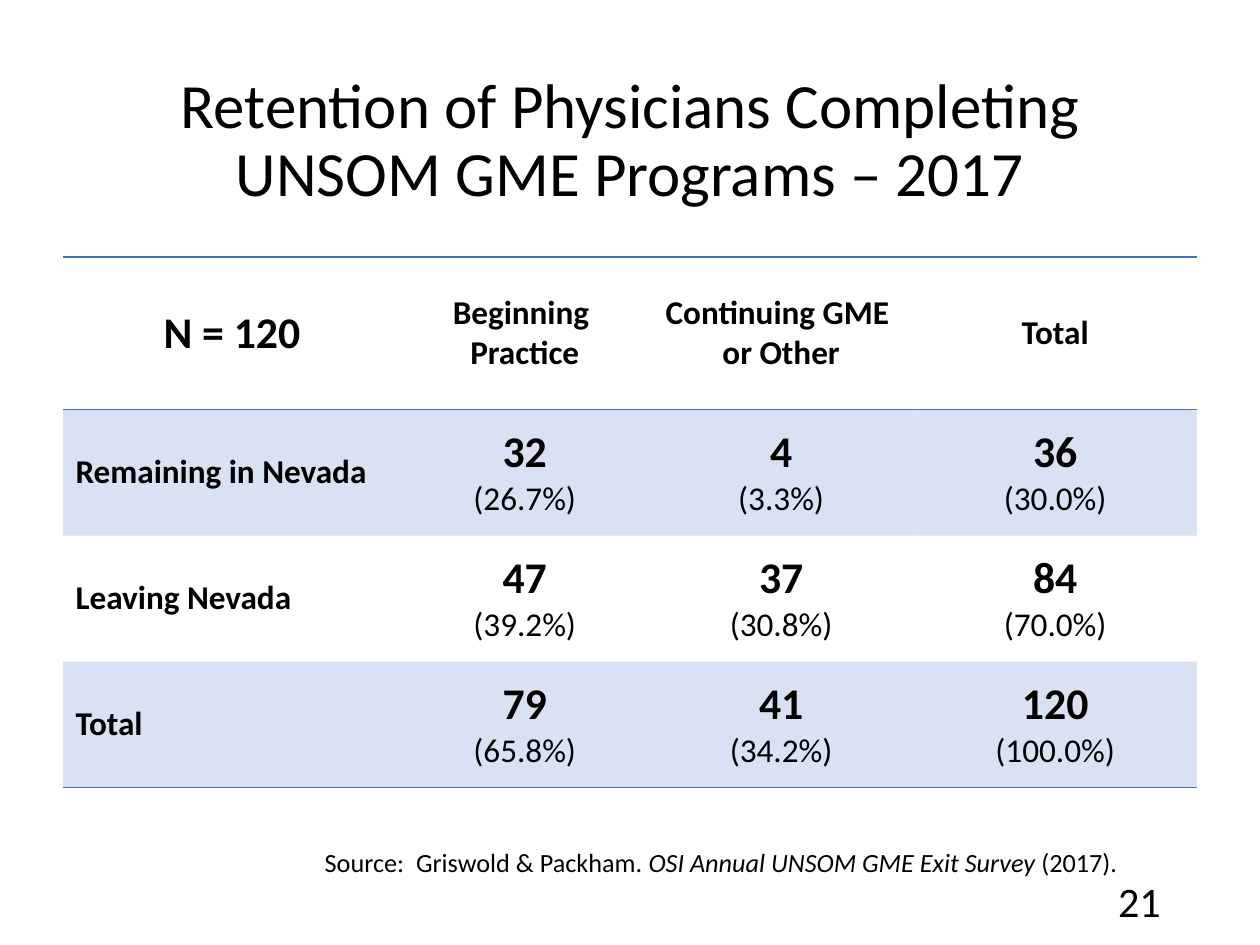
from dataclasses import dataclass

from lxml.etree import SubElement
from pptx import Presentation
from pptx.dml.color import RGBColor
from pptx.enum.text import MSO_ANCHOR as Anchor, PP_ALIGN as Align
from pptx.oxml import parse_xml
from pptx.oxml.ns import nsdecls, qn
from pptx.util import Emu, Pt

PX = 9144  # EMU per px, 100 px to the inch
BLACK = RGBColor(0x00, 0x00, 0x00)
BLUE = RGBColor(0x44, 0x72, 0xC4)
FONT = "Calibri"
LARGE, SMALL = 25, 19
BAND_ALPHA = 20000
NO_STYLE = "{2D5ABB26-0587-4C30-8999-92F81FD0307C}"


@dataclass(frozen=True)
class Line:
    """One paragraph; its runs are (text, italic) pairs."""
    runs: tuple[tuple[str, bool], ...]
    size: int
    bold: bool = False
    align: Align = Align.CENTER
    spacing: float = 1.0


@dataclass(frozen=True)
class Label:
    box: tuple[int, int, int, int]
    line: Line
    anchor: Anchor = Anchor.MIDDLE


@dataclass(frozen=True)
class Outcome:
    name: str
    counts: tuple[tuple[int, str], ...]


def plain(text: str, size: int, bold: bool = False,
          align: Align = Align.CENTER) -> Line:
    return Line(((text, False),), size, bold, align)


TITLE = Label((69, 40, 862, 145), Line(
    (("Retention of Physicians Completing UNSOM GME Programs – 2017", False),),
    36, spacing=0.9))
SOURCE = Label((245, 667, 659, 35), Line(
    (("Source:  Griswold & Packham. ", False),
     ("OSI Annual UNSOM GME Exit Survey ", True),
     ("(2017). ", False)), 15), Anchor.TOP)
PAGE_NUMBER = Label((706, 695, 225, 40), plain("21", 24, align=Align.RIGHT))

TABLE_LEFT, TABLE_TOP = 50, 204
COLUMN_WIDTHS = (268, 197, 210, 225)
ROW_HEIGHTS = (121, 100, 100, 100)
HEADINGS = (("Beginning ", "Practice"), ("Continuing GME ", "or Other"), ("Total",))
OUTCOMES = (
    Outcome("Remaining in Nevada", ((32, "26.7%"), (4, "3.3%"), (36, "30.0%"))),
    Outcome("Leaving Nevada", ((47, "39.2%"), (37, "30.8%"), (84, "70.0%"))),
    Outcome("Total", ((79, "65.8%"), (41, "34.2%"), (120, "100.0%"))),
)


def write(frame, lines: list[Line]) -> None:
    for index, line in enumerate(lines):
        paragraph = frame.paragraphs[0] if index == 0 else frame.add_paragraph()
        paragraph.alignment = line.align
        paragraph.line_spacing = line.spacing
        font = paragraph.font
        font.name, font.size, font.bold = FONT, Pt(line.size), line.bold
        font.color.rgb = BLACK
        for text, italic in line.runs:
            run = paragraph.add_run()
            run.text = text
            if italic:
                run.font.italic = True


def draw_label(slide, label: Label) -> None:
    box = slide.shapes.add_textbox(*(Emu(v * PX) for v in label.box))
    box.text_frame.word_wrap = True
    box.text_frame.vertical_anchor = label.anchor
    write(box.text_frame, [label.line])


def add_rule(cell, side: str) -> None:
    """Draw a blue border; borders come before the fill in a cell."""
    cell._tc.get_or_add_tcPr().insert(0, parse_xml(
        f'<a:{side} {nsdecls("a")} w="{Pt(1)}"><a:solidFill>'
        f'<a:srgbClr val="{BLUE}"/></a:solidFill></a:{side}>'))


def shade(cell) -> None:
    cell.fill.solid()
    cell.fill.fore_color.rgb = BLUE
    colour = cell._tc.tcPr.find(f".//{qn('a:srgbClr')}")
    SubElement(colour, qn("a:alpha")).set("val", str(BAND_ALPHA))


def table_lines() -> list[list[list[Line]]]:
    header = [[plain("N = 120", LARGE, True)]]
    header += [[plain(text, SMALL, True) for text in heading] for heading in HEADINGS]
    rows = [header]
    for outcome in OUTCOMES:
        row = [[plain(outcome.name, SMALL, True, Align.LEFT)]]
        row += [[plain(str(count), LARGE, True), plain(f"({share})", SMALL)]
                for count, share in outcome.counts]
        rows.append(row)
    return rows


def draw_table(slide) -> None:
    table = slide.shapes.add_table(
        len(ROW_HEIGHTS), len(COLUMN_WIDTHS), Emu(TABLE_LEFT * PX), Emu(TABLE_TOP * PX),
        Emu(sum(COLUMN_WIDTHS) * PX), Emu(sum(ROW_HEIGHTS) * PX)).table
    table.first_row = table.horz_banding = False
    table._tbl.tblPr.find(qn("a:tableStyleId")).text = NO_STYLE
    for column, width in zip(table.columns, COLUMN_WIDTHS):
        column.width = Emu(width * PX)
    for row, height in zip(table.rows, ROW_HEIGHTS):
        row.height = Emu(height * PX)

    last = len(ROW_HEIGHTS) - 1
    for r, row_lines in enumerate(table_lines()):
        for c, lines in enumerate(row_lines):
            cell = table.cell(r, c)
            cell.vertical_anchor = Anchor.MIDDLE
            write(cell.text_frame, lines)
            if r % 2:
                shade(cell)
            else:
                cell.fill.background()
            if r in (0, last):
                add_rule(cell, "lnB")
            if r == 0:
                add_rule(cell, "lnT")


def main() -> None:
    deck = Presentation()
    deck.slide_width, deck.slide_height = Emu(1000 * PX), Emu(750 * PX)
    slide = deck.slides.add_slide(deck.slide_layouts[6])

    # Title, retention table, then source and page number
    draw_label(slide, TITLE)
    draw_table(slide)
    for label in (SOURCE, PAGE_NUMBER):
        draw_label(slide, label)
    deck.save("out.pptx")


if __name__ == "__main__":
    main()
